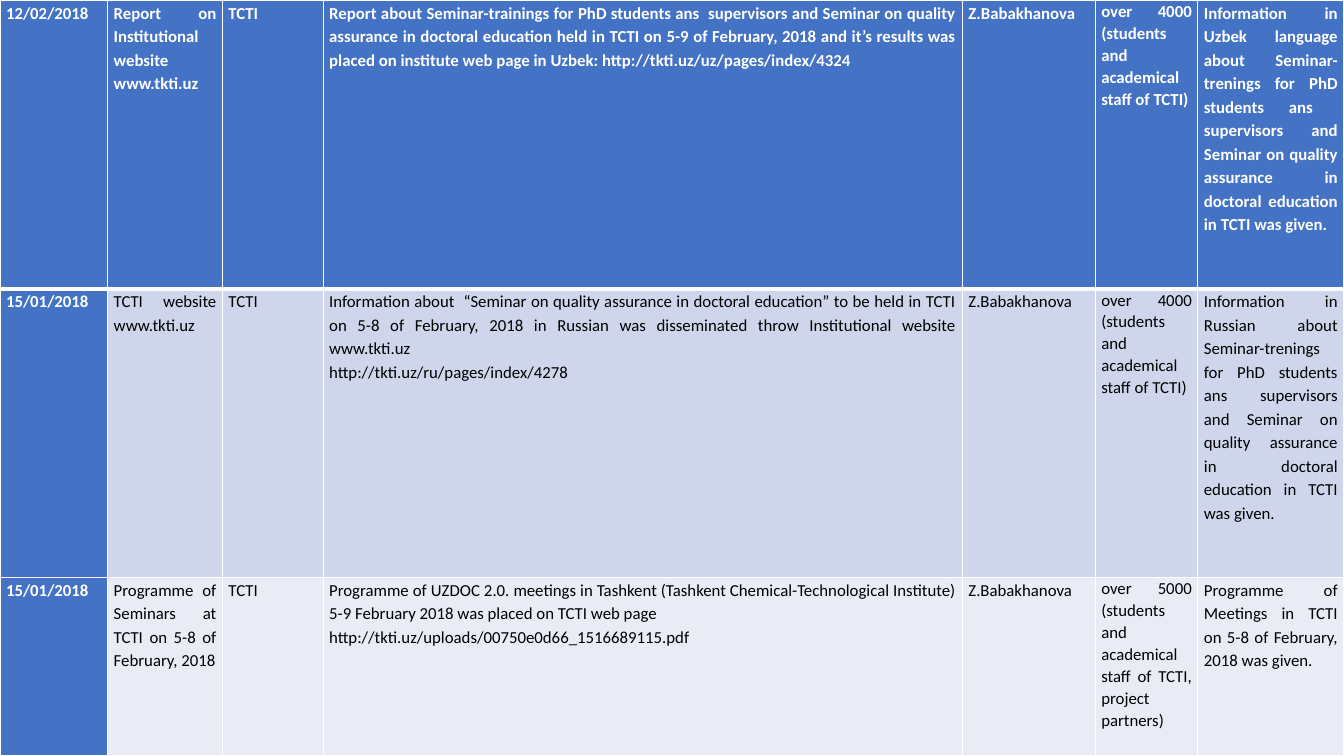
import pptx
import pptx.dml.color
import pptx.enum.text
import pptx.oxml
import pptx.oxml.ns
import pptx.util
from pptx.util import Inches

WHITE = pptx.dml.color.RGBColor(0xFF, 0xFF, 0xFF)
BLACK = pptx.dml.color.RGBColor(0x00, 0x00, 0x00)
BLUE = pptx.dml.color.RGBColor(0x44, 0x72, 0xC4)
DARK_BAND = pptx.dml.color.RGBColor(0xCF, 0xD5, 0xEA)
LIGHT_BAND = pptx.dml.color.RGBColor(0xE9, 0xEB, 0xF5)

COLUMN_WIDTHS = [1.07, 1.14, 1, 6.35, 1.32, 1.02, 1.45]
ROW_HEIGHTS = [2.86, 2.86, 1.77]
ROW_FILLS = [BLUE, DARK_BAND, LIGHT_BAND]
DESCRIPTION_COLUMN = 3
AUDIENCE_COLUMN = 5

ACTIVITIES = [
    [
        "12/02/2018",
        "Report  on Institutional website www.tkti.uz",
        "TCTI",
        "Report about Seminar-trainings for PhD students ans  supervisors and Seminar on quality "
        "assurance in doctoral education held in TCTI on 5-9 of February, 2018 and it’s results was "
        "placed on institute web page in Uzbek: http://tkti.uz/uz/pages/index/4324",
        "Z.Babakhanova",
        "over 4000 (students and academical staff of TCTI)",
        "Information in Uzbek language about Seminar-trenings for PhD students ans  supervisors "
        "and Seminar on quality assurance in doctoral education in TCTI was given.",
    ],
    [
        "15/01/2018",
        "TCTI website www.tkti.uz",
        "TCTI",
        "Information about  “Seminar on quality assurance in doctoral education” to be held in TCTI "
        "on 5-8 of February, 2018 in Russian was disseminated throw Institutional website "
        "www.tkti.uz\nhttp://tkti.uz/ru/pages/index/4278",
        "Z.Babakhanova",
        "over 4000 (students and academical staff of TCTI)",
        "Information in Russian about Seminar-trenings for PhD students ans  supervisors "
        "and Seminar on quality assurance in doctoral education in TCTI was given.",
    ],
    [
        "15/01/2018",
        "Programme of Seminars at TCTI on 5-8 of February, 2018",
        "TCTI",
        "Programme of UZDOC 2.0. meetings in Tashkent (Tashkent Chemical-Technological Institute) "
        "5-9 February 2018 was placed on TCTI web page\n"
        "http://tkti.uz/uploads/00750e0d66_1516689115.pdf",
        "Z.Babakhanova",
        "over 5000 (students and academical staff of TCTI, project partners)",
        "Programme of Meetings in TCTI on 5-8 of February, 2018 was given.",
    ],
]


def set_borders(cell, top, bottom):
    """Draw white cell borders with the given top and bottom widths in points."""
    properties = cell._tc.get_or_add_tcPr()
    for side, width in (("L", 1), ("R", 1), ("T", top), ("B", bottom)):
        properties.append(pptx.oxml.parse_xml(
            f'<a:ln{side} {pptx.oxml.ns.nsdecls("a")} w="{pptx.util.Pt(width)}">'
            f'<a:solidFill><a:srgbClr val="{WHITE}"/></a:solidFill></a:ln{side}>'
        ))


def write_cell(cell, text, color, bold, line_spacing, space_after):
    """Fill a cell with justified text, one paragraph per line."""
    cell.margin_left = cell.margin_right = Inches(0.06)
    cell.margin_top = cell.margin_bottom = 0
    frame = cell.text_frame
    for index, line in enumerate(text.split("\n")):
        paragraph = frame.add_paragraph() if index else frame.paragraphs[0]
        paragraph.alignment = pptx.enum.text.PP_ALIGN.JUSTIFY
        paragraph.line_spacing = line_spacing
        paragraph.space_after = pptx.util.Pt(space_after)
        run = paragraph.add_run()
        run.text = line
        run.font.name = "Calibri"
        run.font.size = pptx.util.Pt(12)
        run.font.bold = bold
        run.font.color.rgb = color


def add_activity_table(slide, left, top, width, height):
    """Place the table of dissemination activities in the given box."""
    table = slide.shapes.add_table(
        len(ROW_HEIGHTS), len(COLUMN_WIDTHS), left, top, width, height
    ).table
    table.horz_banding = False
    for column, share in zip(table.columns, COLUMN_WIDTHS):
        column.width = int(width * share / sum(COLUMN_WIDTHS))
    for row, share in zip(table.rows, ROW_HEIGHTS):
        row.height = int(height * share / sum(ROW_HEIGHTS))

    for row_index, activity in enumerate(ACTIVITIES):
        for column_index, text in enumerate(activity):
            cell = table.cell(row_index, column_index)
            heading = row_index == 0 or column_index == 0
            audience = column_index == AUDIENCE_COLUMN
            compact = audience or (column_index == DESCRIPTION_COLUMN and row_index > 0)
            set_borders(cell, 3 if row_index == 1 else 1, 3 if row_index == 0 else 1)
            cell.fill.solid()
            cell.fill.fore_color.rgb = BLUE if heading else ROW_FILLS[row_index]
            write_cell(cell, text, WHITE if heading else BLACK, heading,
                       1.07 if audience else 1.15, 0 if compact else 8)


def main():
    """Build the slide and save the presentation."""
    presentation = pptx.Presentation()
    presentation.slide_width = Inches(13.33)
    presentation.slide_height = Inches(7.5)
    slide = presentation.slides.add_slide(presentation.slide_layouts[6])
    add_activity_table(slide, 0, 0, presentation.slide_width, presentation.slide_height)
    presentation.save("out.pptx")


if __name__ == "__main__":
    main()
